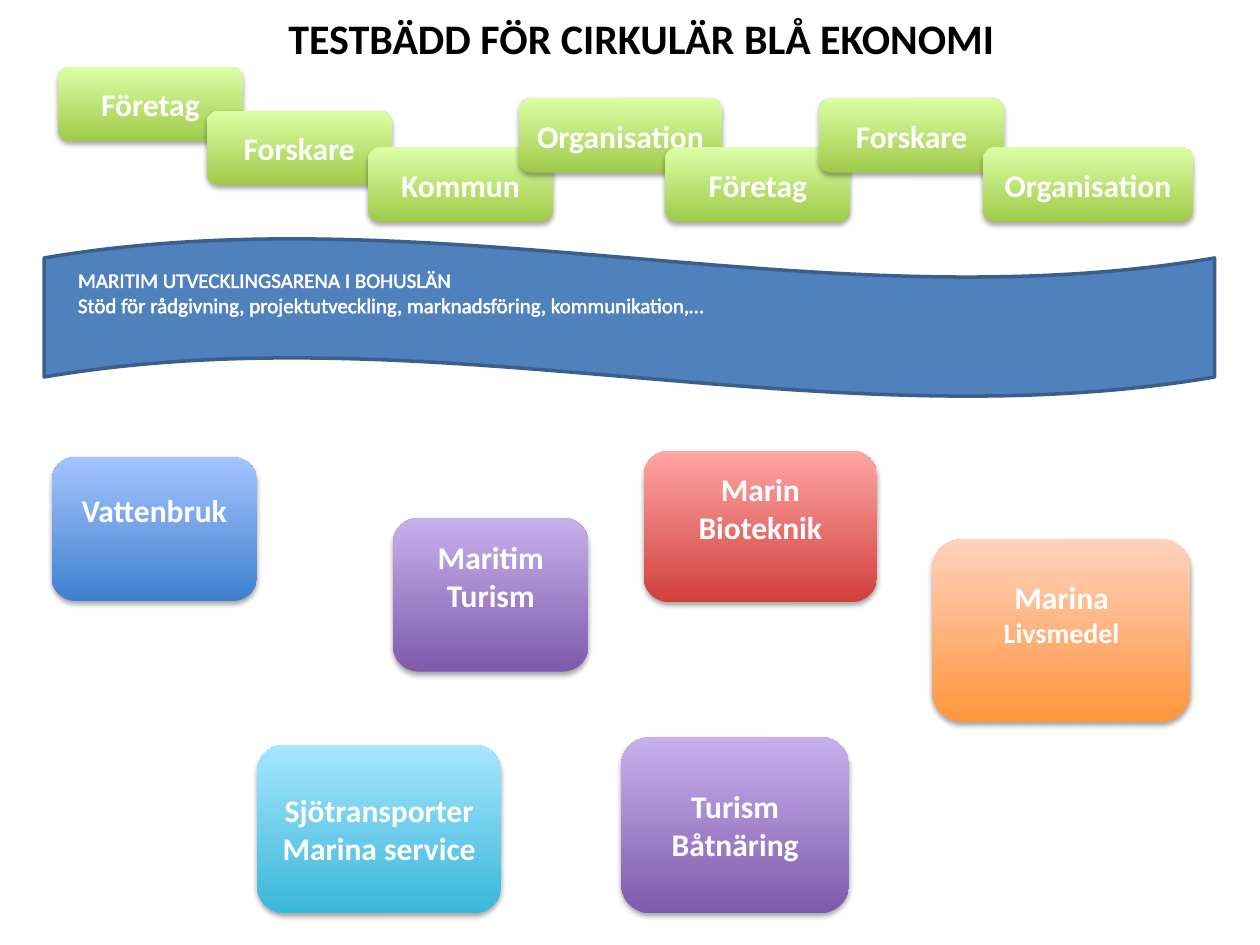
from dataclasses import dataclass

from lxml import etree
from pptx import Presentation
from pptx.dml.color import RGBColor
from pptx.enum.shapes import MSO_SHAPE
from pptx.enum.text import MSO_ANCHOR, PP_ALIGN
from pptx.oxml.ns import qn
from pptx.util import Inches, Pt

ROUNDED = MSO_SHAPE.ROUNDED_RECTANGLE
WAVE = MSO_SHAPE.WAVE
MIDDLE = MSO_ANCHOR.MIDDLE
CENTER = PP_ALIGN.CENTER
LEFT = PP_ALIGN.LEFT


@dataclass(frozen=True)
class Theme:
    font: str = "Calibri"
    title_size: int = 24
    card_size: int = 18
    small_card_size: int = 16
    arena_size: int = 12
    black: str = "000000"
    white: str = "FFFFFF"
    arena_fill: str = "4F81BD"
    arena_line: str = "3A5F8C"
    # Gradients run from the bottom colour to the top colour
    green: tuple = ("A0CA4A", "DAFFA5")
    blue: tuple = ("3F80CE", "A4C4FF")
    purple: tuple = ("7F5BAB", "C8B0ED")
    red: tuple = ("D1403C", "FFA6A5")
    orange: tuple = ("FF953E", "FFD2BD")
    aqua: tuple = ("39B7D8", "A7E6FF")


THEME = Theme()

# Left, top, width, text; all partners share one height
PARTNER_HEIGHT = 0.59
PARTNERS = [
    (0.46, 0.53, 1.47, "Företag"),
    (1.64, 0.88, 1.47, "Forskare"),
    (2.92, 1.17, 1.47, "Kommun"),
    (4.12, 0.78, 1.61, "Organisation"),
    (5.28, 1.17, 1.47, "Företag"),
    (6.5, 0.78, 1.47, "Forskare"),
    (7.8, 1.17, 1.67, "Organisation"),
]

# Box, gradient, lines of (text, size), extra space under the text
BIG, SMALL = THEME.card_size, THEME.small_card_size
INDUSTRIES = [
    ((0.41, 3.63, 1.63, 1.14), THEME.blue, [("Vattenbruk", BIG)], 0.3),
    ((3.12, 4.11, 1.55, 1.22), THEME.purple,
     [("Maritim", BIG), ("Turism", BIG)], 0.3),
    ((5.11, 3.58, 1.85, 1.2), THEME.red, [("Marin Bioteknik", BIG)], 0.3),
    ((7.4, 4.28, 2.05, 1.45), THEME.orange,
     [("Marina", BIG), ("Livsmedel", SMALL)], 0.27),
    ((2.04, 5.91, 1.94, 1.34), THEME.aqua,
     [("Sjötransporter", BIG), ("Marina service", BIG)], 0),
    ((4.93, 5.85, 1.81, 1.4), THEME.purple,
     [("Turism", BIG), ("Båtnäring", BIG)], 0),
]


def rgb(value):
    return RGBColor.from_string(value)


def lengths(box):
    return [Inches(value) for value in box]


def write_lines(frame, lines, color, bold, align):
    frame.word_wrap = True
    for index, (text, size) in enumerate(lines):
        para = frame.paragraphs[0] if index == 0 else frame.add_paragraph()
        para.alignment = align
        para.add_run().text = text
        para.font.name = THEME.font
        para.font.size = Pt(size)
        para.font.bold = bold
        para.font.color.rgb = rgb(color)


def add_soft_shadow(shape):
    shape.shadow.inherit = False
    effects = shape._element.spPr.find(qn("a:effectLst"))
    shadow = etree.SubElement(
        effects, qn("a:outerShdw"), blurRad=str(Pt(3.1)), dist=str(Pt(1.8)),
        dir="5400000", rotWithShape="0")
    color = etree.SubElement(shadow, qn("a:srgbClr"), val=THEME.black)
    etree.SubElement(color, qn("a:alpha"), val="35000")


def outline_text(span, color, width):
    line = etree.Element(qn("a:ln"), w=str(Pt(width)))
    fill = etree.SubElement(line, qn("a:solidFill"))
    etree.SubElement(fill, qn("a:srgbClr"), val=color)
    span.font._element.insert(0, line)


def add_card(page, box, gradient, lines, space_below=0):
    card = page.shapes.add_shape(ROUNDED, *lengths(box))
    card.fill.gradient()
    card.fill.gradient_angle = 90
    for stop, color, position in zip(card.fill.gradient_stops, gradient, (0, 1)):
        stop.color.rgb = rgb(color)
        stop.position = position
    card.line.fill.background()
    add_soft_shadow(card)
    frame = card.text_frame
    frame.vertical_anchor = MIDDLE
    frame.margin_bottom = Inches(0.05 + space_below)
    write_lines(frame, lines, THEME.white, True, CENTER)


def add_title(page, box):
    title = page.shapes.add_textbox(*lengths(box))
    write_lines(title.text_frame,
                [("TESTBÄDD FÖR CIRKULÄR BLÅ EKONOMI", THEME.title_size)],
                THEME.black, True, LEFT)


def add_arena(page, box):
    left, top, width, height = box
    wave = page.shapes.add_shape(WAVE, *lengths(box))
    wave.shadow.inherit = False
    wave.fill.solid()
    wave.fill.fore_color.rgb = rgb(THEME.arena_fill)
    wave.line.color.rgb = rgb(THEME.arena_line)
    wave.line.width = Pt(2)

    label_box = (left + 0.17, top + 0.18, width - 0.34, height - 0.22)
    frame = page.shapes.add_textbox(*lengths(label_box)).text_frame
    texts = [
        "MARITIM UTVECKLINGSARENA I BOHUSLÄN",
        "Stöd för rådgivning, projektutveckling, marknadsföring, kommunikation,…",
    ]
    write_lines(frame, [(text, THEME.arena_size) for text in texts],
                THEME.white, False, LEFT)
    for para in frame.paragraphs:
        outline_text(para.runs[0], THEME.white, 1.45)


def add_partners(page):
    for left, top, width, text in PARTNERS:
        add_card(page, (left, top, width, PARTNER_HEIGHT), THEME.green,
                 [(text, THEME.card_size)])


def add_industries(page):
    for industry in INDUSTRIES:
        add_card(page, *industry)


def main():
    deck = Presentation()
    deck.slide_width, deck.slide_height = Inches(10), Inches(7.5)
    page = deck.slides.add_slide(deck.slide_layouts[6])
    add_arena(page, (0.35, 1.89, 9.29, 1.26))
    add_industries(page)
    add_partners(page)
    add_title(page, (2.19, 0.05, 6.81, 0.5))
    deck.save("out.pptx")


if __name__ == "__main__":
    main()
